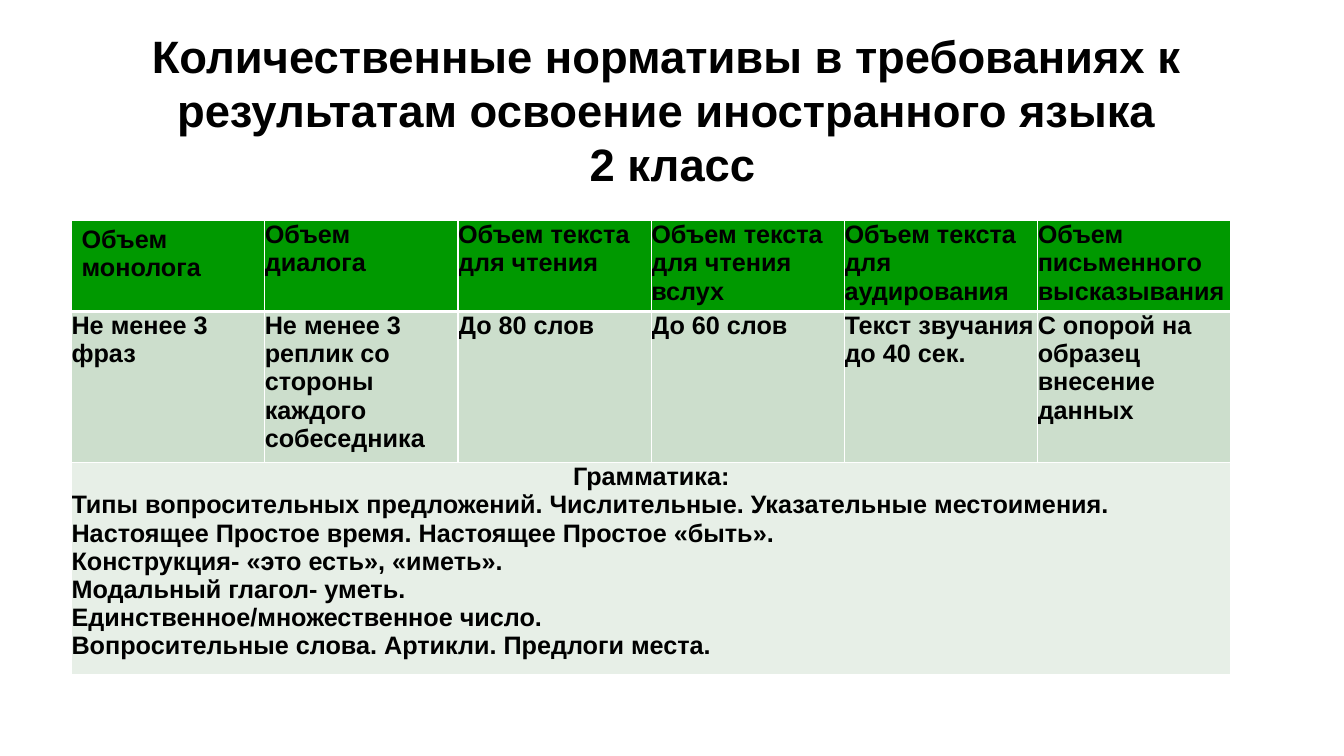
import dataclasses

import lxml.etree
import pptx
import pptx.dml.color
import pptx.enum.text
import pptx.oxml.ns
import pptx.util

Inches = pptx.util.Inches
Align = pptx.enum.text.PP_ALIGN


@dataclasses.dataclass(frozen=True)
class Theme:
    font: str = "Arial"
    ink: str = "000000"
    border: str = "FFFFFF"
    header: str = "009900"
    norms: str = "CCDECC"
    grammar: str = "E7EFE7"
    title_size: float = 32.4
    table_size: float = 18
    thin: float = 1
    thick: float = 3


@dataclasses.dataclass(frozen=True)
class Norm:
    skill: str
    amount: str


THEME = Theme()

TITLE = [
    "Количественные нормативы в требованиях к ",
    "результатам освоение иностранного языка ",
    "2 класс",
]

NORMS = [
    Norm("Объем монолога", "Не менее 3 фраз"),
    Norm("Объем диалога", "Не менее 3 реплик со стороны каждого собеседника"),
    Norm("Объем текста для чтения", "До 80 слов"),
    Norm("Объем текста для чтения вслух", "До 60 слов"),
    Norm("Объем текста для аудирования", "Текст звучания до 40 сек."),
    Norm("Объем письменного высказывания", "С опорой на образец внесение данных"),
]

GRAMMAR = [
    "Грамматика:",
    "Типы вопросительных предложений. Числительные. Указательные местоимения.",
    "Настоящее Простое время. Настоящее Простое «быть».",
    "Конструкция- «это есть», «иметь».",
    "Модальный глагол- уметь.",
    "Единственное/множественное число.",
    "Вопросительные слова. Артикли. Предлоги места.",
]


def rgb(colour: str) -> pptx.dml.color.RGBColor:
    return pptx.dml.color.RGBColor.from_string(colour)


def add_span(para, text: str, size: float) -> None:
    span = para.add_run()
    span.text = text
    span.font.name = THEME.font
    span.font.size = pptx.util.Pt(size)
    span.font.bold = True
    span.font.color.rgb = rgb(THEME.ink)


def set_margins(holder, margin: float) -> None:
    holder.margin_left = holder.margin_right = Inches(margin)
    holder.margin_top = holder.margin_bottom = Inches(margin)


def set_borders(cell, bottom: float) -> None:
    """Insert the four cell borders ahead of the fill."""
    properties = cell._tc.get_or_add_tcPr()
    widths = {"lnL": THEME.thin, "lnR": THEME.thin, "lnT": THEME.thin, "lnB": bottom}
    for position, (side, width) in enumerate(widths.items()):
        line = lxml.etree.Element(pptx.oxml.ns.qn(f"a:{side}"), w=str(pptx.util.Pt(width)))
        fill = lxml.etree.SubElement(line, pptx.oxml.ns.qn("a:solidFill"))
        lxml.etree.SubElement(fill, pptx.oxml.ns.qn("a:srgbClr"), val=THEME.border)
        properties.insert(position, line)


def fill_cell(cell, lines: list[str], colour: str, bottom: float = THEME.thin) -> None:
    cell.fill.solid()
    cell.fill.fore_color.rgb = rgb(colour)
    set_borders(cell, bottom)
    set_margins(cell, 0)
    for number, text in enumerate(lines):
        frame = cell.text_frame
        para = frame.paragraphs[0] if number == 0 else frame.add_paragraph()
        add_span(para, text, THEME.table_size)


def add_title(page) -> None:
    box = page.shapes.add_textbox(Inches(0.67), Inches(0.21), Inches(12), Inches(1.75))
    frame = box.text_frame
    frame.word_wrap = True
    frame.vertical_anchor = pptx.enum.text.MSO_ANCHOR.MIDDLE
    para = frame.paragraphs[0]
    para.alignment = Align.CENTER
    for number, text in enumerate(TITLE):
        if number:
            para.add_line_break()
        add_span(para, text, THEME.title_size)


def add_norms_table(page) -> None:
    table = page.shapes.add_table(
        3, len(NORMS), Inches(0.71), Inches(2.19), Inches(11.5), Inches(1.74)
    ).table
    for row, height in zip(table.rows, (0.9, 0.42, 0.42)):
        row.height = Inches(height)

    # Header and norms, one column per skill
    for column, norm in enumerate(NORMS):
        fill_cell(table.cell(0, column), [norm.skill], THEME.header, THEME.thick)
        fill_cell(table.cell(1, column), [norm.amount], THEME.norms)
    first = table.cell(0, 0)
    first.margin_left = first.margin_right = Inches(0.1)
    first.margin_top = first.margin_bottom = Inches(0.05)

    # Grammar across the full width
    grammar = table.cell(2, 0)
    grammar.merge(table.cell(2, len(NORMS) - 1))
    fill_cell(grammar, GRAMMAR, THEME.grammar)
    grammar.text_frame.paragraphs[0].alignment = Align.CENTER


def main() -> None:
    deck = pptx.Presentation()
    deck.slide_width, deck.slide_height = Inches(13.33), Inches(7.5)
    page = deck.slides.add_slide(deck.slide_layouts[6])
    add_title(page)
    add_norms_table(page)
    deck.save("out.pptx")


if __name__ == "__main__":
    main()
